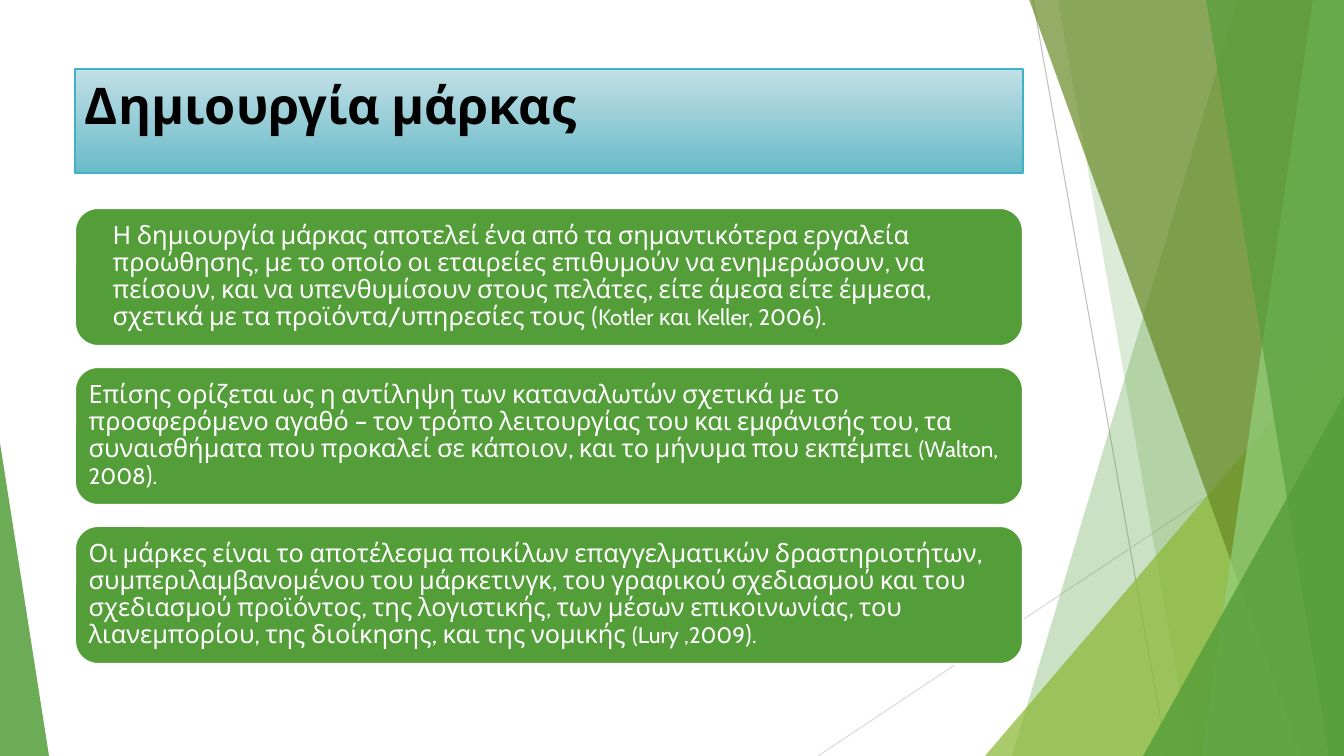
"""Build a slide on brand creation with three text cards and a faceted green backdrop."""
import dataclasses

import pptx
import pptx.dml.color
import pptx.enum.shapes
import pptx.enum.text
import pptx.oxml
import pptx.oxml.ns
import pptx.util

SHAPES = pptx.enum.shapes.MSO_SHAPE
ANCHOR = pptx.enum.text.MSO_ANCHOR
EMU_PER_PX = 914400 / 100.8
WIDTH, HEIGHT = 1344, 756


def px(length):
    return pptx.util.Emu(round(length * EMU_PER_PX))


def rgb(code):
    return pptx.dml.color.RGBColor.from_string(code)


@dataclasses.dataclass(frozen=True)
class Theme:
    font: str = "Cabin"
    green: str = "549E39"
    lime: str = "8AB833"
    olive: str = "678A26"
    mint: str = "93D07D"
    steep_line: str = "BFBFBF"
    shallow_line: str = "D9D9D9"
    banner_top: str = "C2DFE6"
    banner_bottom: str = "69BBC8"
    banner_edge: str = "3FB3C6"
    ink: str = "000000"
    paper: str = "FFFFFF"
    title_size: int = 36
    body_size: int = 18
    citation_size: int = 16


class SlideBuilder:
    def __init__(self, slide, theme):
        self.shapes = slide.shapes
        self.theme = theme

    def hairline(self, start, end, color):
        line = self.shapes.add_connector(
            pptx.enum.shapes.MSO_CONNECTOR.STRAIGHT, *map(px, start + end))
        line.line.color.rgb = rgb(color)
        line.line.width = pptx.util.Pt(0.75)
        line._element.spPr.append(pptx.oxml.parse_xml(
            f"<a:effectLst {pptx.oxml.ns.nsdecls('a')}/>"))

    def tint(self, facet, color, opacity):
        facet.shadow.inherit = False
        facet.fill.solid()
        facet.fill.fore_color.rgb = rgb(color)
        facet.line.fill.background()
        swatch = facet._element.spPr.find(".//" + pptx.oxml.ns.qn("a:srgbClr"))
        swatch.append(pptx.oxml.parse_xml(
            f"<a:alpha {pptx.oxml.ns.nsdecls('a')} val=\"{opacity * 1000}\"/>"))

    def facet(self, top_left, bottom_left, color, opacity):
        outline = self.shapes.build_freeform(top_left, -1, scale=EMU_PER_PX)
        outline.add_line_segments(
            [(WIDTH, -1), (WIDTH, HEIGHT), (bottom_left, HEIGHT)], close=True)
        self.tint(outline.convert_to_shape(), color, opacity)

    def corner(self, left, top, width, apex, color, opacity):
        triangle = self.shapes.add_shape(
            SHAPES.ISOSCELES_TRIANGLE, *map(px, (left, top, width, HEIGHT - top)))
        triangle.adjustments[0] = apex
        self.tint(triangle, color, opacity)

    def add_words(self, panel, runs, color, anchor, inset, indent=0):
        frame = panel.text_frame
        frame.word_wrap = True
        frame.vertical_anchor = anchor
        frame.margin_left = frame.margin_right = px(inset[0])
        frame.margin_top = frame.margin_bottom = px(inset[1])
        paragraph = frame.paragraphs[0]
        paragraph.alignment = pptx.enum.text.PP_ALIGN.LEFT
        paragraph.font.name = self.theme.font
        paragraph.font.color.rgb = rgb(color)
        if indent:
            paragraph._p.get_or_add_pPr().set("marL", str(px(indent)))
        for words, size in runs:
            run = paragraph.add_run()
            run.text = words
            run.font.size = pptx.util.Pt(size)
        return paragraph

    def banner(self, left, top, width, height, title):
        panel = self.shapes.add_shape(
            SHAPES.RECTANGLE, *map(px, (left, top, width, height)))
        panel.shadow.inherit = False
        panel.fill.gradient()
        panel.fill.gradient_angle = 270
        ends = (self.theme.banner_top, self.theme.banner_bottom)
        for stop, color in zip(panel.fill.gradient_stops, ends):
            stop.color.rgb = rgb(color)
        panel.line.color.rgb = rgb(self.theme.banner_edge)
        panel.line.width = pptx.util.Pt(1)
        heading = self.add_words(panel, [(title, self.theme.title_size)],
                                 self.theme.ink, ANCHOR.TOP, (10, 5))
        heading.font.bold = True

    def card(self, left, top, width, height, statement, citation, indent):
        panel = self.shapes.add_shape(
            SHAPES.ROUNDED_RECTANGLE, *map(px, (left, top, width, height)))
        panel.shadow.inherit = False
        panel.fill.solid()
        panel.fill.fore_color.rgb = rgb(self.theme.green)
        panel.line.color.rgb = rgb(self.theme.paper)
        panel.line.width = pptx.util.Pt(1.5)
        runs = [(statement, self.theme.body_size),
                (citation, self.theme.citation_size),
                (").", self.theme.body_size)]
        body = self.add_words(panel, runs, self.theme.paper, ANCHOR.MIDDLE,
                              (7, 7), indent)
        body.line_spacing = 0.9


CARDS = [
    ("Η δημιουργία μάρκας αποτελεί ένα από τα σημαντικότερα εργαλεία προώθησης, "
     "με το οποίο οι εταιρείες επιθυμούν να ενημερώσουν, να πείσουν, και να "
     "υπενθυμίσουν στους πελάτες, είτε άμεσα είτε έμμεσα, σχετικά με τα "
     "προϊόντα/υπηρεσίες τους (", "Kotler και Keller, 2006", 24),
    ("Επίσης ορίζεται ως η αντίληψη των καταναλωτών σχετικά με το προσφερόμενο "
     "αγαθό – τον τρόπο λειτουργίας του και εμφάνισής του, τα συναισθήματα που "
     "προκαλεί σε κάποιον, και το μήνυμα που εκπέμπει ", "(Walton, 2008", 0),
    ("Οι μάρκες είναι το αποτέλεσμα ποικίλων επαγγελματικών δραστηριοτήτων, "
     "συμπεριλαμβανομένου του μάρκετινγκ, του γραφικού σχεδιασμού και του "
     "σχεδιασμού προϊόντος, της λογιστικής, των μέσων επικοινωνίας, του "
     "λιανεμπορίου, της διοίκησης, και της νομικής ", "(Lury ,2009", 0),
]


def main():
    deck = pptx.Presentation()
    deck.slide_width, deck.slide_height = px(WIDTH), px(HEIGHT)
    theme = Theme()
    builder = SlideBuilder(deck.slides.add_slide(deck.slide_layouts[6]), theme)

    builder.hairline((1033, 0), (1167, HEIGHT), theme.steep_line)
    builder.hairline((WIDTH, 406), (818, HEIGHT), theme.shallow_line)
    builder.facet(1238, 1012, theme.green, 30)
    builder.facet(1058, 1191, theme.green, 20)
    builder.corner(985, 336, 359, 1, theme.lime, 72)
    builder.facet(1029, 1301, theme.olive, 70)
    builder.facet(1313, 1202, theme.mint, 70)
    builder.facet(1206, 1329, theme.green, 65)
    builder.corner(1143, 396, 201, 1, theme.green, 80)
    builder.corner(0, 443, 49, 0, theme.green, 85)

    left, width = 75, 948
    builder.banner(left, 69, width, 104, "Δημιουργία μάρκας")
    first_top, card_height, gap = 208, 138, 21
    for index, (statement, citation, indent) in enumerate(CARDS):
        top = first_top + index * (card_height + gap)
        builder.card(left, top, width, card_height, statement, citation, indent)

    deck.save("out.pptx")


if __name__ == "__main__":
    main()
